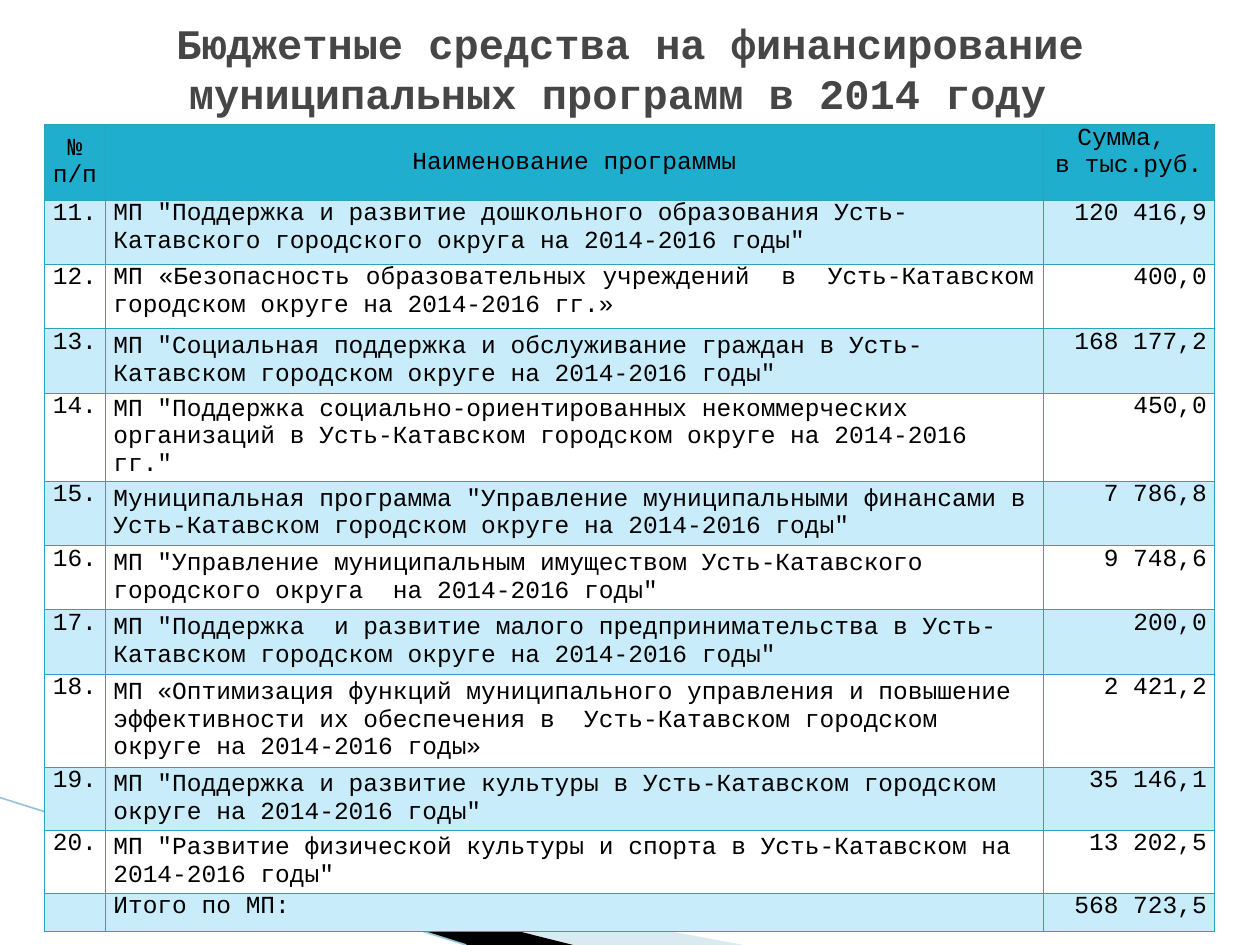
from dataclasses import dataclass

from lxml import etree
from pptx import Presentation
from pptx.dml.color import RGBColor
from pptx.enum.shapes import MSO_CONNECTOR
from pptx.enum.text import MSO_ANCHOR, PP_ALIGN
from pptx.oxml import parse_xml
from pptx.oxml.ns import qn
from pptx.util import Inches, Pt

LEFT, CENTER, RIGHT, JUSTIFY = PP_ALIGN.LEFT, PP_ALIGN.CENTER, PP_ALIGN.RIGHT, PP_ALIGN.JUSTIFY
TOP, MIDDLE = MSO_ANCHOR.TOP, MSO_ANCHOR.MIDDLE
STRAIGHT = MSO_CONNECTOR.STRAIGHT
NAMESPACE = "http://schemas.openxmlformats.org/drawingml/2006/main"


@dataclass(frozen=True)
class Theme:
    font: str = "Courier New"
    title_size: int = 24
    table_size: int = 14
    title: str = "464646"
    text: str = "000000"
    header: str = "1FAECD"
    band: str = "C9ECFA"
    plain: str = "FFFFFF"
    border: str = "2DA2BF"
    border_width: float = 0.75
    pale_wedge: str = "A0CBDC"
    dark_wedge: str = "000000"
    line: str = "97C5D8"
    line_width: float = 0.95


THEME = Theme()
TITLE = "Бюджетные средства на финансирование муниципальных программ в 2014 году "
HEADER = ("№ п/п", "Наименование программы", "Сумма, \nв тыс.руб.")
FIRST_NUMBER = 11
PROGRAMS = [
    ('МП "Поддержка и развитие дошкольного образования Усть-Катавского городского округа на 2014-2016 годы"', "120 416,9"),
    ("МП «Безопасность образовательных учреждений  в  Усть-Катавском городском округе на 2014-2016 гг.» ", "400,0"),
    ('МП "Социальная поддержка и обслуживание граждан в Усть-Катавском городском округе на 2014-2016 годы"', "168 177,2"),
    ('МП "Поддержка социально-ориентированных некоммерческих организаций в Усть-Катавском городском округе на 2014-2016 гг."', "450,0"),
    ('Муниципальная программа "Управление муниципальными финансами в Усть-Катавском городском округе на 2014-2016 годы"', "7 786,8"),
    ('МП "Управление муниципальным имуществом Усть-Катавского городского округа  на 2014-2016 годы"', "9 748,6"),
    ('МП "Поддержка  и развитие малого предпринимательства в Усть-Катавском городском округе на 2014-2016 годы"', "200,0"),
    ("МП «Оптимизация функций муниципального управления и повышение эффективности их обеспечения в  Усть-Катавском городском округе на 2014-2016 годы»", "2 421,2"),
    ('МП "Поддержка и развитие культуры в Усть-Катавском городском округе на 2014-2016 годы"', "35 146,1"),
    ('МП "Развитие физической культуры и спорта в Усть-Катавском на 2014-2016 годы"', "13 202,5"),
]
TOTAL = ("", "Итого по МП:", "568 723,5")
COLUMN_WIDTHS = (0.49, 7.44, 1.36)
ROW_HEIGHTS = [0.6] + [0.51] * 7 + [0.74] + [0.5] * 2 + [0.3]
COLUMN_ALIGNMENTS = (CENTER, LEFT, RIGHT)
JUSTIFIED_ROW = 2
MIDDLE_NAME_ROWS = range(3, 11)
WEDGES = [
    ([(0.55, 6.5), (5.9, 7.5), (4.56, 7.5)], THEME.pale_wedge, 40),
    ([(0.53, 6.49), (4.55, 7.5), (3.7, 7.5)], THEME.dark_wedge, 100),
]


def style_text(text_frame, size, color, alignment, bold=False):
    """Format every paragraph and run of a text frame."""
    for paragraph in text_frame.paragraphs:
        paragraph.alignment = alignment
        for run in paragraph.runs:
            run.font.name = THEME.font
            run.font.size = Pt(size)
            run.font.bold = bold
            run.font.color.rgb = RGBColor.from_string(color)


def add_wedge(slide, points, color, opacity):
    """Draw a filled corner wedge."""
    corners = [(Inches(x), Inches(y)) for x, y in points]
    builder = slide.shapes.build_freeform(*corners[0])
    builder.add_line_segments(corners[1:])
    shape = builder.convert_to_shape()
    shape.shadow.inherit = False
    shape.line.fill.background()
    shape.fill.solid()
    shape.fill.fore_color.rgb = RGBColor.from_string(color)
    if opacity < 100:
        fill_color = shape._element.spPr.find(".//" + qn("a:srgbClr"))
        etree.SubElement(fill_color, qn("a:alpha"), val=str(opacity * 1000))


def add_corner_line(slide):
    """Draw the thin line along the corner wedges."""
    line = slide.shapes.add_connector(STRAIGHT, 0, Inches(6.33), Inches(3.7), Inches(7.5))
    line.line.color.rgb = RGBColor.from_string(THEME.line)
    line.line.width = Pt(THEME.line_width)
    etree.SubElement(line._element.spPr, qn("a:effectLst"))


def add_title(slide):
    """Place the centred slide title."""
    shape = slide.shapes.add_textbox(0, Inches(0.11), Inches(10), Inches(0.85))
    text_frame = shape.text_frame
    text_frame.word_wrap = True
    text_frame.vertical_anchor = MIDDLE
    text_frame.text = TITLE
    style_text(text_frame, THEME.title_size, THEME.title, CENTER, bold=True)


def add_borders(cell):
    """Outline all four sides of a cell."""
    properties = cell._tc.get_or_add_tcPr()
    for index, side in enumerate(("lnL", "lnR", "lnT", "lnB")):
        properties.insert(index, parse_xml(
            f'<a:{side} xmlns:a="{NAMESPACE}" w="{Pt(THEME.border_width)}"><a:solidFill>'
            f'<a:srgbClr val="{THEME.border}"/></a:solidFill></a:{side}>'))


def fill_cell(cell, text, row, column):
    """Write and format one table cell according to its position."""
    cell.margin_left = cell.margin_right = Inches(0.06)
    cell.margin_top = cell.margin_bottom = 0
    alignment = CENTER if row == 0 else COLUMN_ALIGNMENTS[column]
    if row == JUSTIFIED_ROW and column == 1:
        alignment = JUSTIFY
    is_middle = (row == 0 and column < 2) or (row in MIDDLE_NAME_ROWS and column == 1)
    cell.vertical_anchor = MIDDLE if is_middle else TOP
    cell.text_frame.text = text
    style_text(cell.text_frame, THEME.table_size, THEME.text, alignment)
    color = THEME.header if row == 0 else THEME.band if row % 2 else THEME.plain
    cell.fill.solid()
    cell.fill.fore_color.rgb = RGBColor.from_string(color)
    add_borders(cell)


def add_budget_table(slide):
    """Build the table of programs and sums."""
    numbered = [(f"{number}.", *program) for number, program in enumerate(PROGRAMS, FIRST_NUMBER)]
    rows = [HEADER, *numbered, TOTAL]
    table = slide.shapes.add_table(
        len(rows), len(COLUMN_WIDTHS), Inches(0.35), Inches(0.99),
        Inches(sum(COLUMN_WIDTHS)), Inches(sum(ROW_HEIGHTS))).table
    for column, width in zip(table.columns, COLUMN_WIDTHS):
        column.width = Inches(width)
    for row, height in zip(table.rows, ROW_HEIGHTS):
        row.height = Inches(height)
    for row, texts in enumerate(rows):
        for column, text in enumerate(texts):
            fill_cell(table.cell(row, column), text, row, column)


def main():
    """Build and save the budget slide."""
    presentation = Presentation()
    presentation.slide_width, presentation.slide_height = Inches(10), Inches(7.5)
    slide = presentation.slides.add_slide(presentation.slide_layouts[6])
    for points, color, opacity in WEDGES:
        add_wedge(slide, points, color, opacity)
    add_corner_line(slide)
    add_title(slide)
    add_budget_table(slide)
    presentation.save("out.pptx")


if __name__ == "__main__":
    main()
